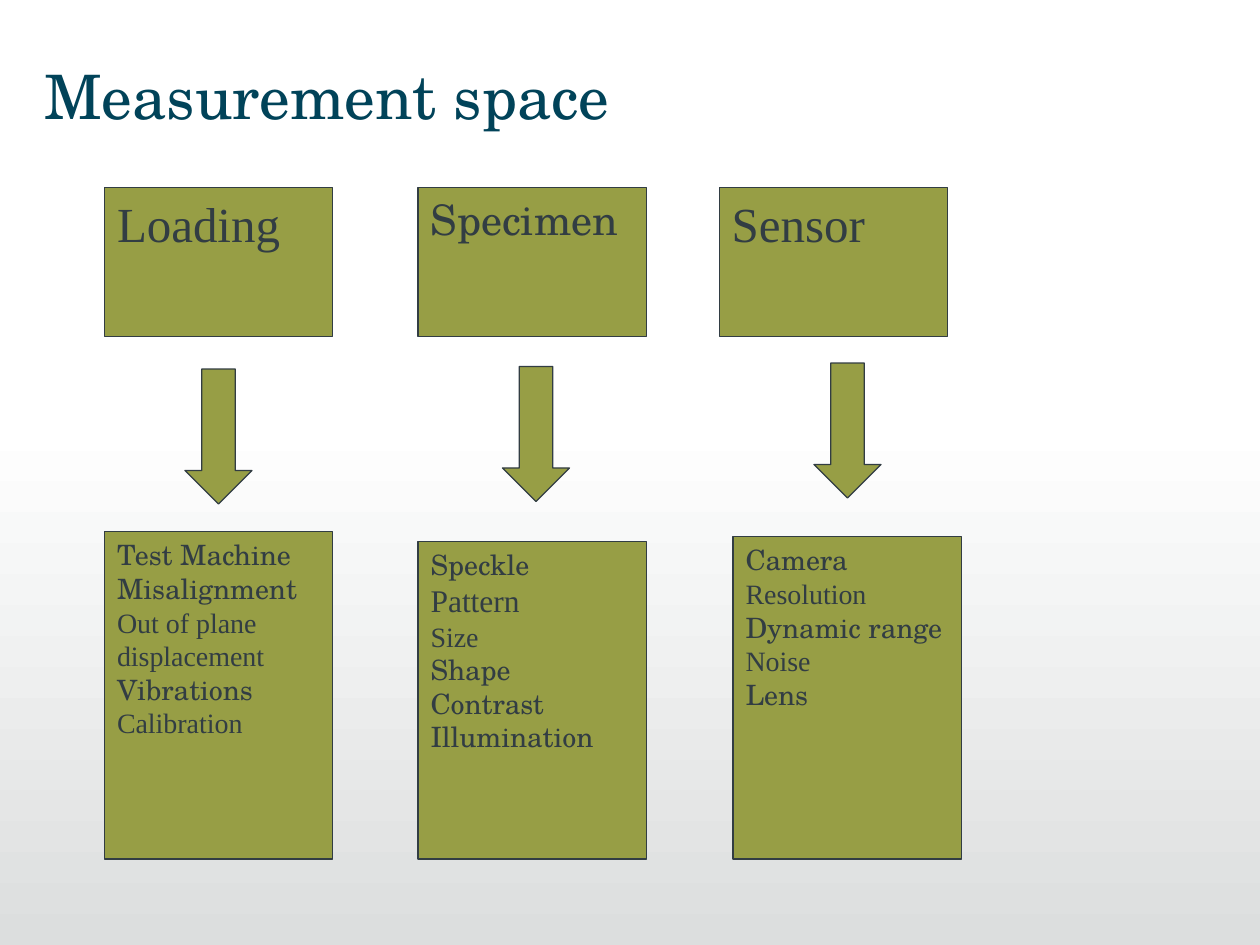
from pptx import Presentation
from pptx.dml.color import RGBColor
from pptx.enum.shapes import MSO_SHAPE as Shape
from pptx.enum.text import MSO_ANCHOR as Anchor, PP_ALIGN as Align
from pptx.util import Cm, Pt

OLIVE, SLATE, TEAL = "979E45", "323D43", "014359"
SCHOLA, TIMES = "TeX Gyre Schola", "Times New Roman"
BOX_W = 4.6
HEAD_TOP, HEAD_H = 3.78, 3.0
ARROW_W, ARROW_H = 1.35, 2.72
LIST_BOTTOM = 17.32

# Lines are (text, font, size); lengths are in centimetres
COLUMNS = [
    dict(head=("Loading", TIMES, 28), head_x=2.11,
         arrow=(3.73, 7.44), list_at=(2.11, 10.72),
         lines=[("Test Machine", SCHOLA, 16), ("Misalignment", SCHOLA, 16),
                ("Out of plane displacement", TIMES, 16),
                ("Vibrations", SCHOLA, 16), ("Calibration", TIMES, 16)]),
    dict(head=("Specimen", SCHOLA, 24), head_x=8.43,
         arrow=(10.13, 7.39), list_at=(8.43, 10.92),
         lines=[("Speckle", SCHOLA, 16), ("Pattern", TIMES, 18),
                ("Size", TIMES, 16), ("Shape", SCHOLA, 16),
                ("Contrast", SCHOLA, 16), ("Illumination", SCHOLA, 16)]),
    dict(head=("Sensor", TIMES, 28), head_x=14.5,
         arrow=(16.41, 7.32), list_at=(14.78, 10.82),
         lines=[("Camera", SCHOLA, 16), ("Resolution", TIMES, 16),
                ("Dynamic range", SCHOLA, 16), ("Noise", TIMES, 16),
                ("Lens", SCHOLA, 16)]),
]


def rgb(color):
    return RGBColor.from_string(color)


def style_text(p, font, size, color):
    p.alignment = Align.LEFT
    p.font.name = font
    p.font.size = Pt(size)
    p.font.color.rgb = rgb(color)


def add_backdrop(slide, prs):
    """Shade the lower part of the slide from white to grey."""
    top = Cm(8.46)
    sp = slide.shapes.add_shape(Shape.RECTANGLE, 0, top,
                                prs.slide_width, prs.slide_height - top)
    sp.shadow.inherit = False
    sp.line.fill.background()
    sp.fill.gradient()
    sp.fill.gradient_angle = 270
    for stop, color in zip(sp.fill.gradient_stops, ("FFFFFF", "DCDEDE")):
        stop.color.rgb = rgb(color)


def add_olive_shape(slide, kind, x, y, w, h):
    sp = slide.shapes.add_shape(kind, Cm(x), Cm(y), Cm(w), Cm(h))
    sp.shadow.inherit = False
    sp.fill.solid()
    sp.fill.fore_color.rgb = rgb(OLIVE)
    sp.line.color.rgb = rgb(SLATE)
    sp.line.width = Pt(0.75)
    return sp


def add_box(slide, x, y, h, lines):
    sp = add_olive_shape(slide, Shape.RECTANGLE, x, y, BOX_W, h)
    tf = sp.text_frame
    tf.word_wrap = True
    tf.vertical_anchor = Anchor.TOP
    tf.text = "\n".join(text for text, _, _ in lines)
    for p, (_, font, size) in zip(tf.paragraphs, lines):
        style_text(p, font, size, SLATE)


def set_title(slide, text):
    sp = slide.shapes.title
    sp.left, sp.top, sp.width, sp.height = Cm(0.89), Cm(1.02), Cm(23.6), Cm(1.8)
    tf = sp.text_frame
    tf.text = text
    tf.margin_left = 0
    tf.vertical_anchor = Anchor.MIDDLE
    style_text(tf.paragraphs[0], SCHOLA, 35, TEAL)


def main():
    prs = Presentation()
    prs.slide_width, prs.slide_height = Cm(25.4), Cm(19.05)
    slide = prs.slides.add_slide(prs.slide_layouts[5])

    add_backdrop(slide, prs)
    set_title(slide, "Measurement space")

    # Each column: heading, arrow, list of influences
    for col in COLUMNS:
        add_box(slide, col["head_x"], HEAD_TOP, HEAD_H, [col["head"]])
        add_olive_shape(slide, Shape.DOWN_ARROW, *col["arrow"], ARROW_W, ARROW_H)
        x, y = col["list_at"]
        add_box(slide, x, y, LIST_BOTTOM - y, col["lines"])

    prs.save("out.pptx")


if __name__ == "__main__":
    main()
